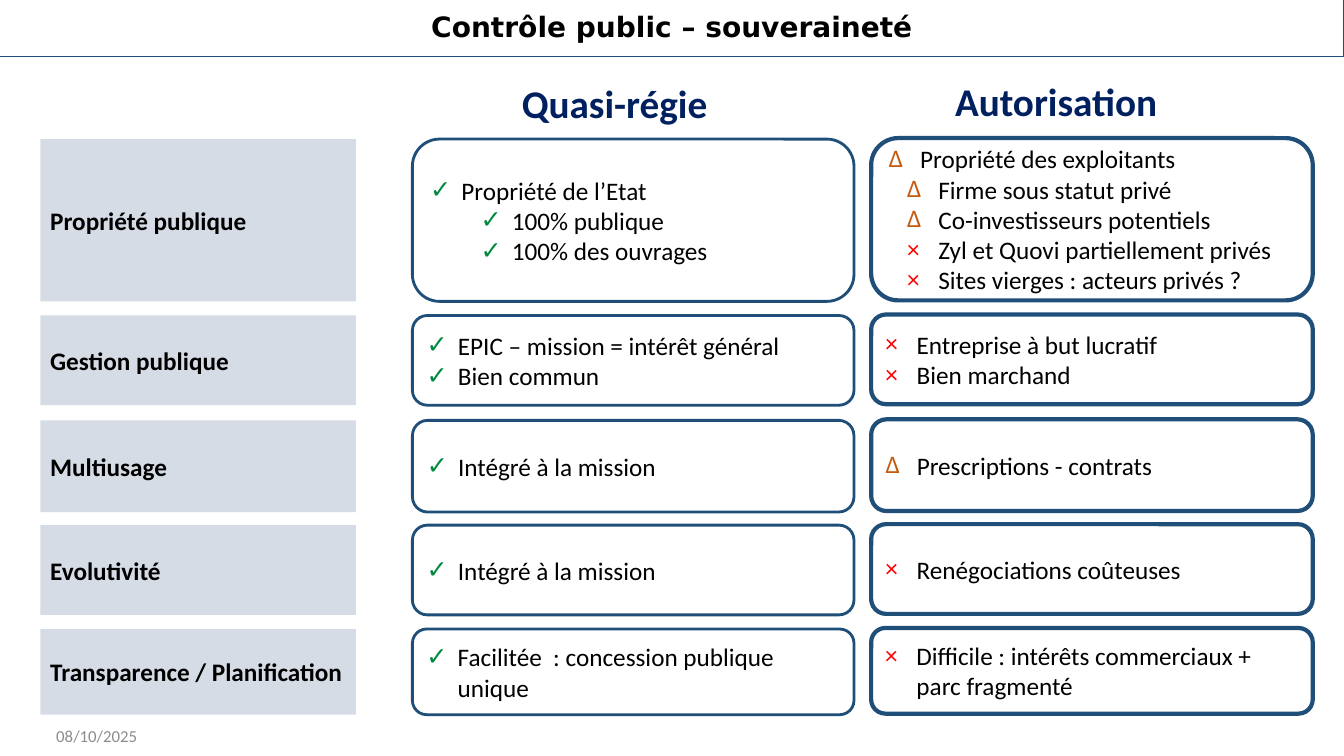
import pptx
import pptx.util
import pptx.dml.color
import pptx.enum.shapes
import pptx.enum.text
import pptx.oxml
import pptx.oxml.ns
from pptx.util import Inches

SHAPE = pptx.enum.shapes.MSO_SHAPE
ALIGN = pptx.enum.text.PP_ALIGN
COLORS = {"✓": "008A3E", "Δ": "C55A11", "×": "FF0000"}


def paint(target, color):
    target.rgb = pptx.dml.color.RGBColor.from_string(color)


def add_box(kind, place, lines, size=18, color="000000", bold=False,
            font="Calibri", align=ALIGN.LEFT, fill=None, edge=0):
    """Lines are (mark, indent, text); an empty mark means no bullet."""
    place = [Inches(n) for n in place]
    if kind is None:
        box = slide.shapes.add_textbox(*place)
    else:
        box = slide.shapes.add_shape(kind, *place)
        box.shadow.inherit = False
        if fill:
            box.fill.solid()
            paint(box.fill.fore_color, fill)
        else:
            box.fill.background()
        if edge:
            box.line.width = pptx.util.Pt(edge)
            paint(box.line.color, "1F4E79")
        else:
            box.line.fill.background()
    frame = box.text_frame
    frame.word_wrap = True
    frame.vertical_anchor = pptx.enum.text.MSO_ANCHOR.MIDDLE
    for i, (mark, indent, text) in enumerate(lines):
        para = frame.add_paragraph() if i else frame.paragraphs[0]
        para.alignment = align
        run = para.add_run()
        run.text = text
        run.font.size = pptx.util.Pt(size)
        run.font.name = font
        run.font.bold = bold
        paint(run.font.color, color)
        if mark:
            props = para._p.get_or_add_pPr()
            props.set("marL", str(Inches(indent)))
            props.set("indent", str(Inches(-0.31)))
            space = pptx.oxml.ns.nsdecls("a")
            for xml in (
                f'<a:buClr {space}><a:srgbClr val="{COLORS[mark]}"/></a:buClr>',
                f'<a:buFont {space} typeface="Calibri"/>',
                f'<a:buChar {space} char="{mark}"/>',
            ):
                props.append(pptx.oxml.parse_xml(xml))
    return frame


deck = pptx.Presentation()
deck.slide_width = Inches(13.33)
deck.slide_height = Inches(7.5)
slide = deck.slides.add_slide(deck.slide_layouts[6])

# Title band
title = add_box(SHAPE.RECTANGLE, (0, 0, 13.33, 0.56),
                [("", 0, "Contrôle public – souveraineté")], size=20, bold=True,
                font="DejaVu Sans", align=ALIGN.CENTER, edge=0.75)
title.paragraphs[0].line_spacing = 0.9

# Column heads
for left, top, head in ((3.44, 0.74, "Quasi-régie"), (7.82, 0.72, "Autorisation")):
    add_box(None, (left, top, 5.31, 0.56), [("", 0, head)], size=28,
            color="002060", bold=True, align=ALIGN.CENTER)

# Rows: top, height, label, left column, right column
rows = [
    (1.38, 1.61, "Propriété publique",
     [("✓", 0.31, "Propriété de l’Etat"),
      ("✓", 0.81, "100% publique"),
      ("✓", 0.81, "100% des ouvrages")],
     [("Δ", 0.31, "Propriété des exploitants"),
      ("Δ", 0.49, "Firme sous statut privé"),
      ("Δ", 0.49, "Co-investisseurs potentiels"),
      ("×", 0.49, "Zyl et Quovi partiellement privés"),
      ("×", 0.49, "Sites vierges : acteurs privés ?")]),
    (3.13, 0.89, "Gestion publique",
     [("✓", 0.31, "EPIC – mission = intérêt général"),
      ("✓", 0.31, "Bien commun")],
     [("×", 0.31, "Entreprise à but lucratif"),
      ("×", 0.31, "Bien marchand")]),
    (4.17, 0.91, "Multiusage",
     [("✓", 0.31, "Intégré à la mission")],
     [("Δ", 0.31, "Prescriptions - contrats")]),
    (5.21, 0.89, "Evolutivité",
     [("✓", 0.31, "Intégré à la mission")],
     [("×", 0.31, "Renégociations coûteuses")]),
    (6.24, 0.85, "Transparence / Planification",
     [("✓", 0.31, "Facilitée  : concession publique unique")],
     [("×", 0.31, "Difficile : intérêts commerciaux + parc fragmenté")]),
]
for top, high, label, first, second in rows:
    add_box(SHAPE.RECTANGLE, (0.4, top, 3.13, high), [("", 0, label)],
            bold=True, fill="D6DCE5")
    add_box(SHAPE.ROUNDED_RECTANGLE, (4.09, top, 4.38, high), first, edge=2)
    add_box(SHAPE.ROUNDED_RECTANGLE, (8.64, top - 0.01, 4.38, high), second, edge=3)

# Date
add_box(None, (0.46, 7.1, 3, 0.4), [("", 0, "08/10/2025")], size=12, color="8C8C8C")

deck.save("out.pptx")
